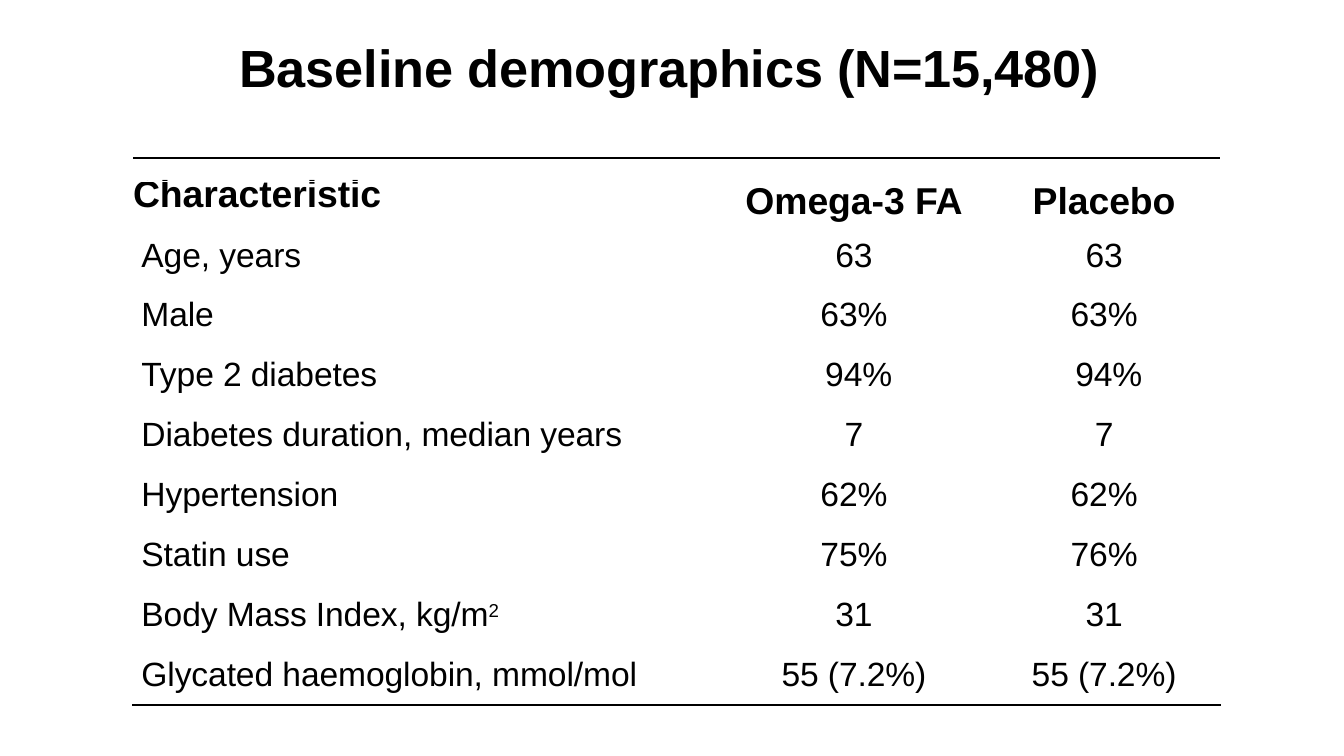
from dataclasses import dataclass
from itertools import accumulate

from lxml.etree import SubElement
from pptx import Presentation
from pptx.dml.color import RGBColor
from pptx.enum.shapes import MSO_CONNECTOR
from pptx.enum.text import PP_ALIGN
from pptx.oxml.ns import qn
from pptx.util import Pt


@dataclass(frozen=True)
class Theme:
    """Colours, font and sizes of the slide."""
    ink: RGBColor = RGBColor(0, 0, 0)
    font: str = "Arial"
    title: float = 28
    head: float = 20
    body: float = 18
    sup: float = 17.2
    rule: float = 1
    spacing: str = "-5"


THEME = Theme()
COLS = [299.5, 163.5, 119.5]
ROW_HEIGHTS = [26.6, 30.2] + [32.15] * 6 + [30.9]
RULE_PARTS = [314.6, 142.6, 125.3]
HEADERS = ["Characteristic", "Omega-3 FA", "Placebo"]
ROWS = [
    ["Age, years", "63", "63"],
    ["Male", "63%", "63%"],
    ["Type 2 diabetes", "94%", "94%"],
    ["Diabetes duration, median years", "7", "7"],
    ["Hypertension", "62%", "62%"],
    ["Statin use", "75%", "76%"],
    ["Body Mass Index, kg/m", "31", "31"],
    ["Glycated haemoglobin, mmol/mol", "55 (7.2%)", "55 (7.2%)"],
]
SUPERSCRIPTS = {"Body Mass Index, kg/m": "2"}
SHIFTED = "94%"


def style_run(r, size, bold=False):
    """Apply the theme font to a run."""
    r.font.name, r.font.size, r.font.bold = THEME.font, Pt(size), bold
    r.font.color.rgb = THEME.ink
    r._r.get_or_add_rPr().set("spc", THEME.spacing)


def set_margins(box, left=0, top=0, right=0):
    """Set the inner margins of a cell or text frame."""
    box.margin_left, box.margin_top = Pt(left), Pt(top)
    box.margin_right, box.margin_bottom = Pt(right), 0


def add_bottom_border(cell):
    """Draw the closing rule under a cell."""
    ln = SubElement(cell._tc.get_or_add_tcPr(), qn("a:lnB"), w=str(Pt(THEME.rule)))
    fill = SubElement(ln, qn("a:solidFill"))
    SubElement(fill, qn("a:srgbClr"), val=str(THEME.ink))


def add_title(slide, x, y, w, h):
    """Place the slide title."""
    tf = slide.shapes.add_textbox(Pt(x), Pt(y), Pt(w), Pt(h)).text_frame
    tf.word_wrap = False
    set_margins(tf, top=1)
    tf.text = "Baseline demographics (N=15,480)"
    p = tf.paragraphs[0]
    p.alignment = PP_ALIGN.LEFT
    style_run(p.runs[0], THEME.title, True)


def add_top_rule(slide, x, y):
    """Draw the rule above the table, one part per column."""
    for start, end in zip([0, *accumulate(RULE_PARTS)], accumulate(RULE_PARTS)):
        ln = slide.shapes.add_connector(
            MSO_CONNECTOR.STRAIGHT, Pt(x + start), Pt(y), Pt(x + end), Pt(y))
        ln.line.color.rgb, ln.line.width = THEME.ink, Pt(THEME.rule)
        SubElement(ln._element.spPr, qn("a:effectLst"))


def fill_cell(cell, text, row, col):
    """Write one table cell with the layout of its row and column."""
    is_head, is_label = row == 0, col == 0
    shift = 5 if text == SHIFTED else 0
    left = [0 if is_head else 4.5, 10 + shift, 0][col]
    right = 5 - shift if col == 2 else 0
    top = 0 if is_head else 3 if row == 1 else 4.5
    set_margins(cell, left, top, right)
    cell.text = text
    p = cell.text_frame.paragraphs[0]
    p.alignment = PP_ALIGN.LEFT if is_label else PP_ALIGN.CENTER
    style_run(p.runs[0], THEME.head if is_head else THEME.body, is_head)
    if is_head:
        p.line_spacing = Pt(18 if is_label else 22.1)
    if text in SUPERSCRIPTS:
        r = p.add_run()
        r.text = SUPERSCRIPTS[text]
        style_run(r, THEME.sup)
        r._r.get_or_add_rPr().set("baseline", "27000")
    if row == len(ROWS):
        add_bottom_border(cell)
    cell.fill.background()


def add_demographics_table(slide, x, y):
    """Place the table of baseline characteristics."""
    data = [HEADERS, *ROWS]
    table = slide.shapes.add_table(
        len(data), len(COLS), Pt(x), Pt(y),
        Pt(sum(COLS)), Pt(sum(ROW_HEIGHTS))).table
    table.first_row = table.horz_banding = False
    for column, width in zip(table.columns, COLS):
        column.width = Pt(width)
    for row, height in zip(table.rows, ROW_HEIGHTS):
        row.height = Pt(height)
    for i, values in enumerate(data):
        for j, text in enumerate(values):
            fill_cell(table.cell(i, j), text, i, j)


def main():
    """Build and save the slide."""
    prs = Presentation()
    prs.slide_width, prs.slide_height = Pt(720), Pt(405)
    slide = prs.slides.add_slide(prs.slide_layouts[6])
    add_title(slide, 128.2, 18, 464.4, 35.3)
    add_top_rule(slide, 71.3, 84.7)
    add_demographics_table(slide, 71.3, 97.2)
    prs.save("out.pptx")


if __name__ == "__main__":
    main()
